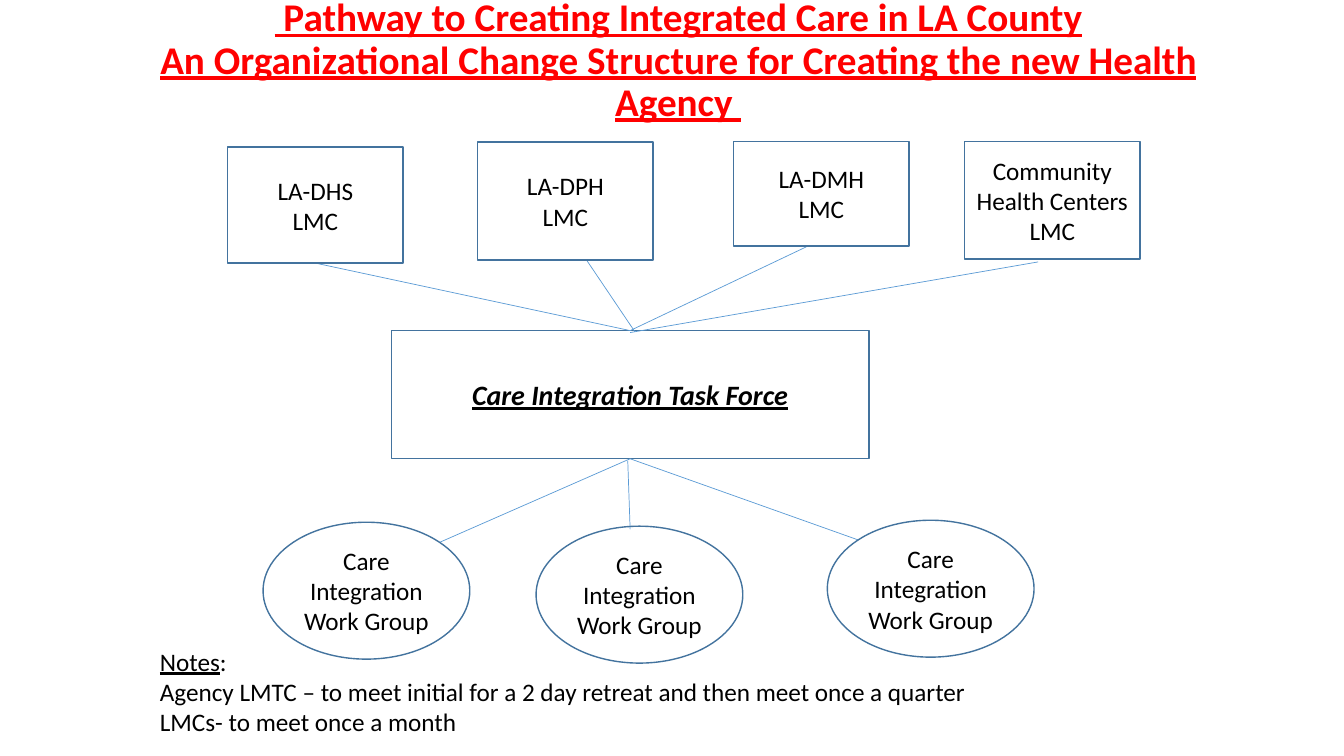
from lxml import etree
from pptx import Presentation
from pptx.dml.color import RGBColor
from pptx.enum.shapes import MSO_CONNECTOR, MSO_SHAPE
from pptx.enum.text import MSO_ANCHOR, MSO_AUTO_SIZE, PP_ALIGN
from pptx.oxml.ns import qn
from pptx.util import Cm, Pt

RECTANGLE, OVAL = MSO_SHAPE.RECTANGLE, MSO_SHAPE.OVAL
STRAIGHT = MSO_CONNECTOR.STRAIGHT
MIDDLE = MSO_ANCHOR.MIDDLE
NO_AUTOFIT, FIT_SHAPE = MSO_AUTO_SIZE.NONE, MSO_AUTO_SIZE.SHAPE_TO_FIT_TEXT
LEFT, CENTER = PP_ALIGN.LEFT, PP_ALIGN.CENTER

FONT = "Calibri"
BLACK, RED, OUTLINE, LINK = "000000", "FF0000", "43739E", "5B9BD5"

BOX_WIDTH = 4.42
COMMITTEES = [  # text, left, top, height
    ("LA-DHS\nLMC", 5.74, 3.71, 2.92),
    ("LA-DPH\nLMC", 12.04, 3.58, 2.97),
    ("LA-DMH\nLMC", 18.49, 3.56, 2.64),
    ("Community Health Centers\nLMC", 24.31, 3.56, 2.97),
]
WORK_GROUPS = [(6.63, 13.16), (13.51, 13.26), (20.85, 13.11)]
LINKS = [  # start x, start y, end x, end y
    (7.95, 6.63, 15.88, 8.33),
    (14.78, 6.55, 16, 8.36),
    (20.32, 6.22, 15.88, 8.33),
    (26.16, 6.6, 15.88, 8.38),
    (15.88, 11.56, 11.07, 13.67),
    (15.82, 11.61, 15.88, 13.34),
    (15.88, 11.56, 21.64, 13.61),
]


def color(hex_code):
    return RGBColor.from_string(hex_code)


def write(frame, text, size=18, hex_code=BLACK, align=CENTER,
          bold=False, italic=False, underline=False):
    frame.text = text
    frame.word_wrap = True
    for paragraph in frame.paragraphs:
        paragraph.alignment = align
        for run in paragraph.runs:
            font = run.font
            font.name, font.size = FONT, Pt(size)
            font.bold, font.italic, font.underline = bold, italic, underline
            font.color.rgb = color(hex_code)


def add_title(slide, text):
    title = slide.shapes.title
    title.left, title.top = Cm(2.49), Cm(-0.13)
    title.width, title.height = Cm(29.21), Cm(3.35)
    frame = title.text_frame
    write(frame, text, 28, RED, bold=True, underline=True)
    frame.auto_size = NO_AUTOFIT
    frame.vertical_anchor = MIDDLE
    for paragraph in frame.paragraphs:
        paragraph.line_spacing = 0.9
        paragraph.space_before = Pt(0)


def add_node(slide, kind, text, left, top, width, height, **style):
    node = slide.shapes.add_shape(kind, Cm(left), Cm(top), Cm(width), Cm(height))
    node.shadow.inherit = False
    node.fill.background()
    node.line.color.rgb = color(OUTLINE)
    node.line.width = Pt(1)
    node.text_frame.vertical_anchor = MIDDLE
    write(node.text_frame, text, **style)


def add_link(slide, *ends):
    link = slide.shapes.add_connector(STRAIGHT, *map(Cm, ends))
    link.line.color.rgb = color(LINK)
    link.line.width = Pt(0.5)
    etree.SubElement(link._element.spPr, qn("a:effectLst"))


def add_notes_box(slide, heading, lines):
    """Add the visible notes with an underlined heading."""
    box = slide.shapes.add_textbox(Cm(3.78), Cm(16.15), Cm(28.98), Cm(2.57))
    frame = box.text_frame
    write(frame, "\n".join([heading, *lines]), align=LEFT)
    frame.auto_size = FIT_SHAPE
    first = frame.paragraphs[0]
    first.runs[0].font.underline = True
    colon = first.add_run()
    colon.text = ":"
    colon.font.name, colon.font.size = FONT, Pt(18)
    colon.font.color.rgb = color(BLACK)


def main():
    deck = Presentation()
    deck.slide_width, deck.slide_height = Cm(33.87), Cm(19.05)
    slide = deck.slides.add_slide(deck.slide_layouts[5])

    add_title(slide, " Pathway to Creating Integrated Care in LA County\v"
                     "An Organizational Change Structure for Creating "
                     "the new Health Agency ")
    add_node(slide, RECTANGLE, "Care Integration Task Force",
             9.86, 8.33, 12.04, 3.23,
             size=20, bold=True, italic=True, underline=True)
    for ends in LINKS:
        add_link(slide, *ends)
    for text, left, top, height in COMMITTEES:
        add_node(slide, RECTANGLE, text, left, top, BOX_WIDTH, height)
    for left, top in WORK_GROUPS:
        add_node(slide, OVAL, "Care Integration Work Group", left, top, 5.21, 3.45)
    add_notes_box(slide, "Notes", [
        "Agency LMTC – to meet initial for a 2 day retreat and then meet once a quarter",
        "LMCs- to meet once a month",
    ])
    deck.save("out.pptx")


if __name__ == "__main__":
    main()
